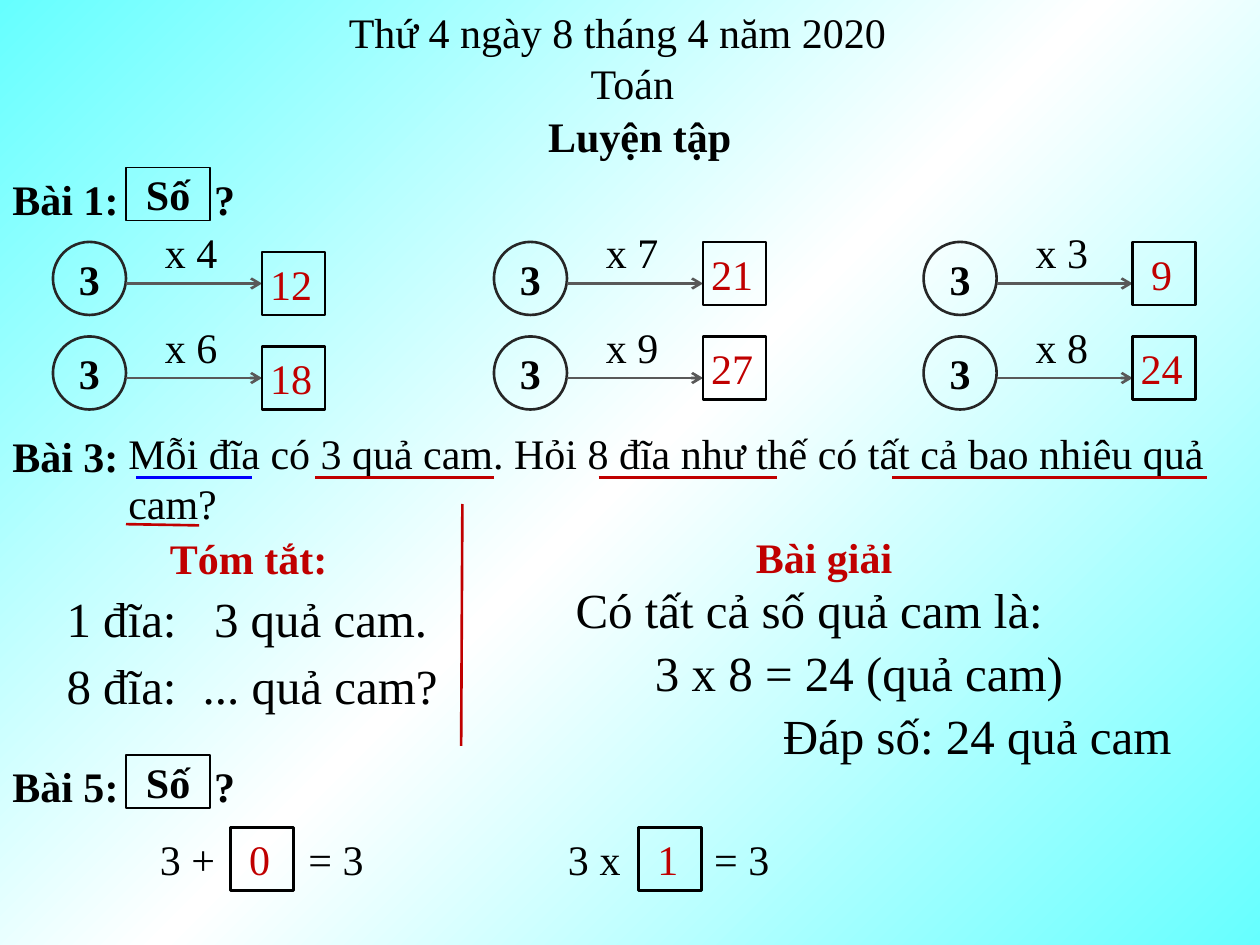
"""Build a one-slide arithmetic lesson on the multiplication table of three."""
from copy import deepcopy

from lxml import etree
from pptx import Presentation
from pptx.dml.color import RGBColor
from pptx.enum.shapes import MSO_CONNECTOR, MSO_SHAPE
from pptx.enum.text import MSO_ANCHOR, MSO_AUTO_SIZE, PP_ALIGN
from pptx.oxml.ns import qn
from pptx.util import Inches, Pt

LEFT, CENTER = PP_ALIGN.LEFT, PP_ALIGN.CENTER
TOP, MIDDLE = MSO_ANCHOR.TOP, MSO_ANCHOR.MIDDLE
FIT_SHAPE, NO_FIT = MSO_AUTO_SIZE.SHAPE_TO_FIT_TEXT, MSO_AUTO_SIZE.NONE
RECTANGLE, OVAL = MSO_SHAPE.RECTANGLE, MSO_SHAPE.OVAL
STRAIGHT = MSO_CONNECTOR.STRAIGHT

BLACK = RGBColor(0x00, 0x00, 0x00)
RED = RGBColor(0xC0, 0x00, 0x00)
BLUE = RGBColor(0x00, 0x00, 0xFF)
CHARCOAL = RGBColor(0x26, 0x26, 0x26)
GRAY = RGBColor(0x59, 0x59, 0x59)
CYAN = RGBColor(0x66, 0xFF, 0xFF)
WHITE = RGBColor(0xFF, 0xFF, 0xFF)
FONT = "Times New Roman"

BACKGROUND = [(0, CYAN), (0.5, WHITE), (1, CYAN)]
TITLE = ("Luyện tập", (4.25, 0.83, 1.67, 0.5))
BOLD, HEADING, LARGE = {"bold": True}, {"bold": True, "color": RED}, {"size": 28}
WRAPPED = {"wrap": True}
TEXTS = [
    ("Toán", (4.59, 0.41, 0.87, 0.5), {}),
    ("Thứ 4 ngày 8 tháng 4 năm 2020", (2.67, 0, 4.5, 0.5), {}),
    ("Mỗi đĩa có 3 quả cam. Hỏi 8 đĩa như thế có tất cả bao nhiêu quả cam?",
     (0.92, 3.34, 8.92, 0.91), WRAPPED),
    ("Bài 3:", (0, 3.37, 1.06, 0.5), BOLD),
    ("Tóm tắt:", (1.25, 4.18, 1.46, 0.5), HEADING),
    ("Bài giải", (5.83, 4.17, 1.42, 0.5), HEADING | WRAPPED | {"align": CENTER}),
    ("1 đĩa:\t3 quả cam.", (0.43, 4.62, 3.25, 0.57), LARGE | WRAPPED | {"tab": 1.17}),
    ("8 đĩa:\t... quả cam?", (0.43, 5.15, 3.25, 0.57), LARGE | WRAPPED | {"tab": 1.08}),
    ("Có tất cả số quả cam là:", (4.47, 4.55, 3.94, 0.57), LARGE),
    ("3 x 8 = 24 (quả cam)", (5.1, 5.05, 3.47, 0.57), LARGE),
    ("Đáp số: 24 quả cam", (5.92, 5.55, 3.67, 0.57), LARGE | WRAPPED | {"align": CENTER}),
]
LINES = [
    (1.08, 3.79, 2, 3.79, BLUE),
    (2.5, 3.79, 3.92, 3.79, RED),
    (4.75, 3.79, 6.17, 3.79, RED),
    (7.08, 3.79, 9.58, 3.79, RED),
    (1, 4.16, 1.58, 4.17, RED),
    (3.67, 4, 3.66, 5.92, RED),
]
NUMBER_TASKS = [("Bài 1:\t?", 1.33), ("Bài 5:\t?", 5.99)]
CHAINS = [
    (0.42, 0.08, [("x 4", "12"), ("x 6", "18")]),
    (3.92, 0, [("x 7", "21"), ("x 9", "27")]),
    (7.33, 0, [("x 3", "9"), ("x 8", "24")]),
]
CHAIN_TOP, CHAIN_STEP, CIRCLE, ARROW, BOX = 1.92, 0.75, 0.58, 1.08, 0.5
EQUATIONS = [("3 +\t= 3", 1.17, 1.18), ("3 x\t= 3", 4.41, 1.16)]
EQUATION_ANSWERS = ["0", "1"]
EQUATION_TOP, EQUATION_GAP = 6.57, 0.66

presentation = Presentation()
presentation.slide_width, presentation.slide_height = Inches(10), Inches(7.5)
slide = presentation.slides.add_slide(presentation.slide_layouts[5])


def inches(values):
    return [Inches(value) for value in values]


def write(shape, text, size=24, color=BLACK, bold=False, align=LEFT,
          wrap=False, tab=None, anchor=TOP, fit=FIT_SHAPE):
    frame = shape.text_frame
    frame.text = text
    settings = {"word_wrap": wrap, "auto_size": fit, "vertical_anchor": anchor}
    for name, value in settings.items():
        setattr(frame, name, value)
    paragraph = frame.paragraphs[0]
    paragraph.alignment = align
    font = paragraph.runs[0].font
    for name, value in {"name": FONT, "size": Pt(size), "bold": bold}.items():
        setattr(font, name, value)
    font.color.rgb = color
    if tab:
        properties = paragraph.runs[0].font._element.getparent().getparent().get_or_add_pPr()
        stops = etree.SubElement(properties, qn("a:tabLst"))
        etree.SubElement(stops, qn("a:tab"), pos=str(Inches(tab)), algn="l")


def add_text(text, place, **style):
    write(slide.shapes.add_textbox(*inches(place)), text, **style)


def add_outline(kind, place, color=BLACK, width=1.5, text=None):
    shape = slide.shapes.add_shape(kind, *inches(place))
    shape.shadow.inherit = False
    shape.fill.background()
    shape.line.color.rgb = color
    shape.line.width = Pt(width)
    if text:
        write(shape, text, bold=True, align=CENTER, wrap=True, anchor=MIDDLE, fit=NO_FIT)


def add_line(start_x, start_y, end_x, end_y, color, arrow=False):
    line = slide.shapes.add_connector(STRAIGHT, *inches((start_x, start_y, end_x, end_y)))
    line.line.color.rgb = color
    line.line.width = Pt(1.5)
    if arrow:
        etree.SubElement(line.line._get_or_add_ln(), qn("a:tailEnd"), type="arrow")
    etree.SubElement(line.element.spPr, qn("a:effectLst"))


def add_answer(answer, left, top):
    add_outline(RECTANGLE, (left, top, BOX, BOX))
    add_text(answer, (left - 0.04, top, 0.54, BOX), color=RED, align=CENTER)


def paint_background():
    fill = slide.background.fill
    fill.gradient()
    fill.gradient_angle = 315
    stop_list = slide.element.find(".//" + qn("a:gsLst"))
    stop_list.append(deepcopy(stop_list[0]))
    for stop, (position, color) in zip(fill.gradient_stops, BACKGROUND):
        stop.position = position
        stop.color.rgb = color


def main():
    paint_background()
    title = slide.shapes.title
    title.left, title.top, title.width, title.height = inches(TITLE[1])
    write(title, TITLE[0], bold=True)
    for text, place, style in TEXTS:
        add_text(text, place, **style)
    for line in LINES:
        add_line(*line)
    for text, top in NUMBER_TASKS:
        add_text(text, (0, top, 2.09, 0.5), bold=True, wrap=True, tab=1.6)
        add_outline(RECTANGLE, (1, top, 0.67, 0.42), width=1, text="Số")
    for left, drop, steps in CHAINS:
        for row, (factor, answer) in enumerate(steps):
            top = CHAIN_TOP + row * CHAIN_STEP
            start, middle = left + CIRCLE, top + 0.33
            add_outline(OVAL, (left, top, CIRCLE, CIRCLE), CHARCOAL, text="3")
            add_line(start, middle, start + ARROW, middle, GRAY, arrow=True)
            add_text(factor, (left + 0.79, top - 0.17, 0.62, 0.5))
            add_answer(answer, start + ARROW, top + drop)
    for (text, left, tab), answer in zip(EQUATIONS, EQUATION_ANSWERS):
        add_text(text, (left, EQUATION_TOP, 1.9, 0.5), wrap=True, tab=tab)
        add_answer(answer, left + EQUATION_GAP, EQUATION_TOP)
    presentation.save("out.pptx")


if __name__ == "__main__":
    main()
